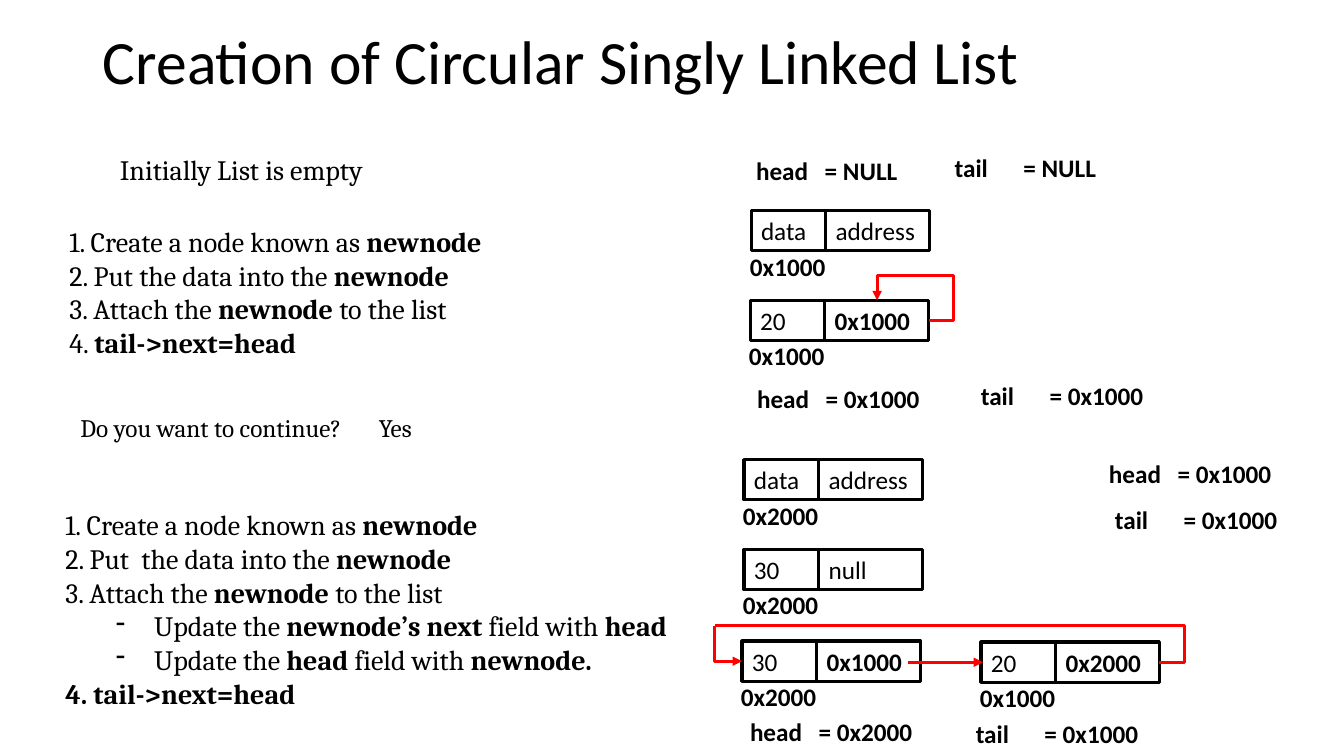
"""Builds the slide on creating a circular singly linked list."""
from dataclasses import dataclass

from lxml import etree
from pptx import Presentation
from pptx.dml.color import RGBColor
from pptx.enum.shapes import MSO_CONNECTOR, MSO_SHAPE
from pptx.enum.text import MSO_ANCHOR, MSO_AUTO_SIZE, PP_ALIGN
from pptx.oxml.ns import qn
from pptx.util import Inches, Pt

RECTANGLE = MSO_SHAPE.RECTANGLE
ELBOW = MSO_CONNECTOR.ELBOW
LEFT = PP_ALIGN.LEFT
TOP = MSO_ANCHOR.TOP
MIDDLE = MSO_ANCHOR.MIDDLE
GROW = MSO_AUTO_SIZE.SHAPE_TO_FIT_TEXT
NO_RESIZE = MSO_AUTO_SIZE.NONE

BLACK = "000000"
RED = "FF0000"
SANS = "Calibri"
SERIF = "Cambria"
LINE_WIDTH = Pt(2.25)
ROW_HEIGHT = 0.4
DATA_WIDTH = 0.74
ADDRESS_WIDTH = 1.03
NAME_WIDTHS = {"head": 0.72, "tail": 0.53}


@dataclass
class Note:
    left: float
    top: float
    width: float
    height: float
    size: int
    lines: list[str]
    wrap: bool = False


@dataclass
class Node:
    left: float
    top: float
    data: str
    address: str
    location: str


@dataclass
class Pointer:
    left: float
    top: float
    name: str
    value: str


@dataclass
class Link:
    start: tuple[float, float]
    end: tuple[float, float]
    geometry: str
    bends: tuple[int, ...] = ()
    arrow: str = ""


NOTES = [
    Note(1.09, 1.46, 2.71, 0.44, 20, ["Initially List is empty"]),
    Note(0.59, 2.18, 4.56, 1.45, 20, [
        "1. Create a node known as **newnode**",
        "2. Put the data into the **newnode**",
        "3. Attach the **newnode** to the list",
        "4. **tail->next=head**",
    ]),
    Note(0.7, 4.04, 3.1, 0.4, 18, ["Do you want to continue?"], True),
    Note(3.66, 4.04, 0.69, 0.4, 18, ["Yes"], True),
    Note(0.55, 4.99, 6.35, 2.46, 20, [
        "1. Create a node known as **newnode**",
        "2. Put  the data into the **newnode**",
        "3. Attach the **newnode** to the list",
        "- Update the **newnode’s next** field with **head**",
        "- Update the **head** field with **newnode.**",
        "**4. tail->next=head**",
    ]),
]
NODES = [
    Node(7.45, 2.09, "data", "address", "0x1000"),
    Node(7.44, 2.98, "20", "0x1000", "0x1000"),
    Node(7.38, 4.56, "data", "address", "0x2000"),
    Node(7.38, 5.45, "30", "null", "0x2000"),
    Node(7.36, 6.36, "30", "0x1000", "0x2000"),
    Node(9.73, 6.37, "20", "0x2000", "0x1000"),
]
POINTERS = [
    Pointer(7.4, 1.49, "head", "NULL"),
    Pointer(9.37, 1.46, "tail", "NULL"),
    Pointer(7.41, 3.75, "head", "0x1000"),
    Pointer(9.63, 3.72, "tail", "0x1000"),
    Pointer(10.9, 4.5, "head", "0x1000"),
    Pointer(10.96, 4.95, "tail", "0x1000"),
    Pointer(7.34, 7.06, "head", "0x2000"),
    Pointer(9.58, 7.08, "tail", "0x1000"),
]
LINKS = [
    Link((9.21, 3.18), (8.7, 2.98), "bentConnector4", (-48500, 223800), "tailEnd"),
    Link((9.01, 6.57), (9.75, 6.57), "line", arrow="tailEnd"),
    Link((11.5, 6.57), (7.09, 6.21), "bentConnector3", (-5700,)),
    Link((7.36, 6.56), (7.09, 6.21), "bentConnector2", arrow="headEnd"),
]


def colour(code: str) -> RGBColor:
    """Turn a hex string into a colour."""
    return RGBColor.from_string(code)


def set_font(font, name: str, size: int, bold: bool | None = None) -> None:
    """Give a font its face, size, weight and black colour."""
    font.name, font.size, font.bold = name, Pt(size), bold
    font.color.rgb = colour(BLACK)


def add_text(page, left: float, top: float, width: float, height: float, wrap: bool = False):
    """Add a text box and return its text frame."""
    box = page.shapes.add_textbox(Inches(left), Inches(top), Inches(width), Inches(height))
    frame = box.text_frame
    frame.word_wrap, frame.auto_size = wrap, GROW
    return frame


def add_label(page, left: float, top: float, width: float, text: str):
    """Add a bold one-line label and return its text frame."""
    frame = add_text(page, left, top, width, ROW_HEIGHT)
    frame.text = text
    set_font(frame.paragraphs[0].font, SANS, 18, True)
    return frame


def add_dash(para) -> None:
    """Indent a paragraph under a dash bullet."""
    properties = para._p.get_or_add_pPr()
    properties.set("marL", str(Inches(0.88)))
    properties.set("indent", str(Inches(-0.38)))
    bullet = etree.Element(qn("a:buChar"), char="-")
    properties.insert(0, bullet)


def add_note(page, note: Note) -> None:
    """Add a serif note whose starred words are bold."""
    frame = add_text(page, note.left, note.top, note.width, note.height, note.wrap)
    for index, line in enumerate(note.lines):
        para = frame.add_paragraph() if index else frame.paragraphs[0]
        if line.startswith("- "):
            para.level = 1
            add_dash(para)
        set_font(para.font, SERIF, note.size)
        for position, words in enumerate(line.removeprefix("- ").split("**")):
            if words:
                span = para.add_run()
                span.text = words
                span.font.bold = position % 2 == 1


def add_node(page, node: Node) -> None:
    """Add the two cells of a list node and its memory location."""
    group = page.shapes.add_group_shape()
    cells = [(node.left, DATA_WIDTH, node.data),
             (node.left + DATA_WIDTH, ADDRESS_WIDTH, node.address)]
    for left, width, text in cells:
        cell = group.shapes.add_shape(
            RECTANGLE, Inches(left), Inches(node.top), Inches(width), Inches(ROW_HEIGHT))
        cell.shadow.inherit = False
        cell.fill.background()
        cell.line.color.rgb, cell.line.width = colour(BLACK), LINE_WIDTH
        frame = cell.text_frame
        frame.text, frame.auto_size, frame.vertical_anchor = text, GROW, TOP
        para = frame.paragraphs[0]
        para.alignment = LEFT
        set_font(para.font, SANS, 18, text.startswith("0x"))
    add_label(page, node.left - 0.11, node.top + 0.35, 0.96, node.location)


def add_pointer(page, pointer: Pointer) -> None:
    """Add a pointer name and the value it holds."""
    add_label(page, pointer.left, pointer.top, NAME_WIDTHS[pointer.name], pointer.name)
    width = 1.05 if pointer.value == "NULL" else 1.26
    frame = add_label(page, pointer.left + 0.57, pointer.top, width, f"= {pointer.value}")
    frame.margin_left = Inches(0.21)


def add_link(page, link: Link) -> None:
    """Add a red connector with its bends and arrowhead."""
    points = [Inches(length) for length in link.start + link.end]
    connector = page.shapes.add_connector(ELBOW, *points)
    connector.line.color.rgb, connector.line.width = colour(RED), LINE_WIDTH
    properties = connector._element.spPr
    geometry = properties.find(qn("a:prstGeom"))
    geometry.set("prst", link.geometry)
    guides = geometry.find(qn("a:avLst"))
    for number, bend in enumerate(link.bends, 1):
        etree.SubElement(guides, qn("a:gd"), name=f"adj{number}", fmla=f"val {bend}")
    if link.arrow:
        etree.SubElement(properties.find(qn("a:ln")), qn(f"a:{link.arrow}"), type="triangle")
    etree.SubElement(properties, qn("a:effectLst"))


def add_title(page, text: str) -> None:
    """Place and format the slide title."""
    title = page.shapes.title
    title.left, title.top = Inches(0.92), Inches(0.23)
    title.width, title.height = Inches(11.5), Inches(0.83)
    frame = title.text_frame
    frame.text, frame.vertical_anchor, frame.auto_size = text, MIDDLE, NO_RESIZE
    para = frame.paragraphs[0]
    para.alignment, para.line_spacing = LEFT, 0.9
    set_font(para.font, SANS, 44)


def main() -> None:
    """Build and save the deck."""
    deck = Presentation()
    deck.slide_width, deck.slide_height = Inches(13.33), Inches(7.5)
    page = deck.slides.add_slide(deck.slide_layouts[5])
    add_title(page, "Creation of Circular Singly Linked List")
    for items, draw in ((NOTES, add_note), (NODES, add_node),
                        (POINTERS, add_pointer), (LINKS, add_link)):
        for item in items:
            draw(page, item)
    deck.save("out.pptx")


if __name__ == "__main__":
    main()
